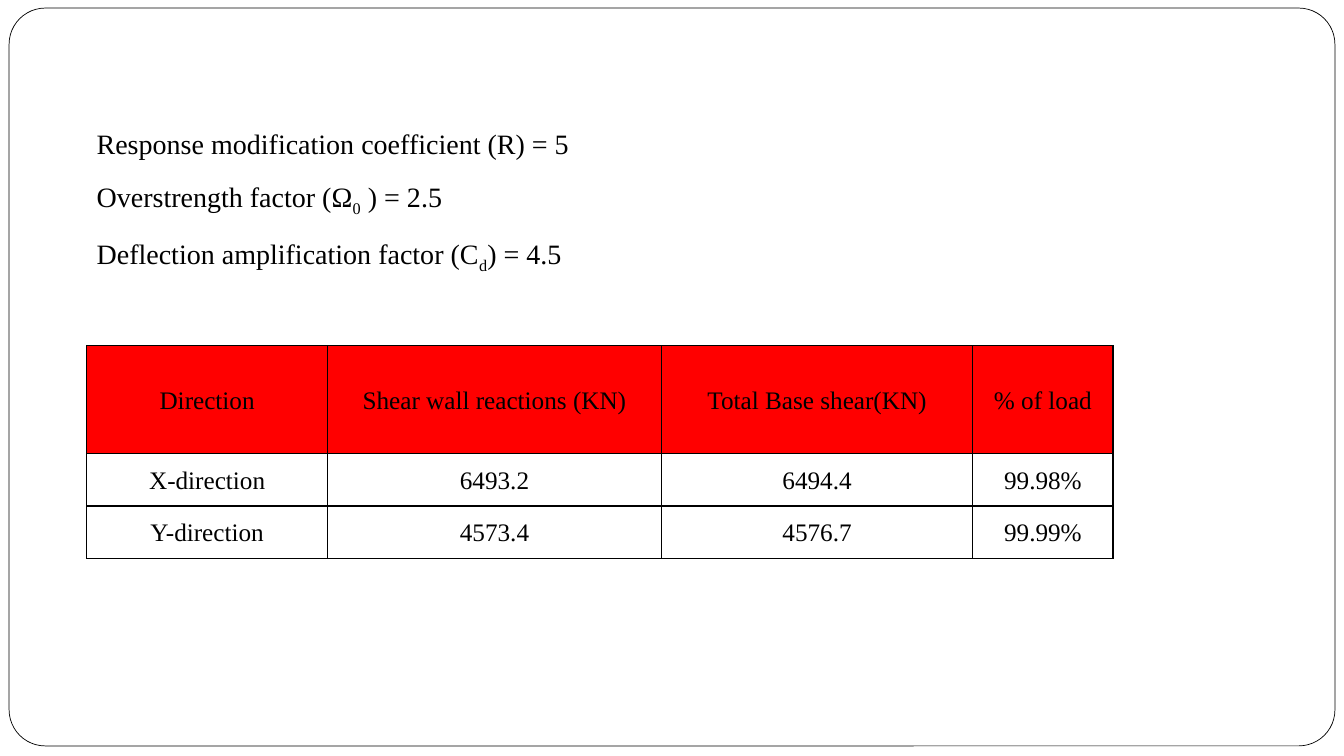
from lxml import etree
from pptx import Presentation, util as u
from pptx.dml.color import RGBColor
from pptx.enum import shapes, text
from pptx.oxml.ns import qn

INK = {"black": "000000", "white": "FFFFFF", "red": "FF0000"}
FACE = "Times New Roman"
WIDE, HIGH = 13.33, 7.5
LEFT = 0.86

FACTS = [
    ["Response modification coefficient (R) = 5"],
    ["Overstrength factor (Ω", "0", " ) = 2.5"],
    ["Deflection amplification factor (C", "d", ") = 4.5"],
]
LOADS = [
    ["Direction", "Shear wall reactions (KN)", "Total Base shear(KN)", "% of load"],
    ["X-direction", "6493.2", "6494.4", "99.98%"],
    ["Y-direction", "4573.4", "4576.7", "99.99%"],
]
COLS = [2.39, 3.31, 3.09, 1.39]
ROWS = [1.07, 0.52, 0.52]


def color(name):
    return RGBColor.from_string(INK[name])


def paint(item, name):
    item.fill.solid()
    item.fill.fore_color.rgb = color(name)


def style(run, size):
    run.font.name = FACE
    run.font.size = u.Pt(size)
    run.font.color.rgb = color("black")


def box(*sides):
    return [u.Inches(side) for side in sides]


def add_frame(slide):
    gap = 0.09
    frame = slide.shapes.add_shape(
        shapes.MSO_SHAPE.ROUNDED_RECTANGLE,
        *box(gap, 0.08, WIDE - 2 * gap, 7.32))
    frame.adjustments[0] = 0.049
    frame.shadow.inherit = False
    paint(frame, "white")
    frame.line.color.rgb = color("black")
    frame.line.width = u.Pt(0.5)


def add_facts(slide):
    body = slide.shapes.add_textbox(*box(LEFT, 1.04, 9.57, 1.62)).text_frame
    body.word_wrap = True
    for row, parts in enumerate(FACTS):
        para = body.add_paragraph() if row else body.paragraphs[0]
        para.line_spacing = 1.5
        for spot, part in enumerate(parts):
            run = para.add_run()
            run.text = part
            style(run, 20)
            if spot == 1:
                run._r.get_or_add_rPr().set("baseline", "-25000")


def add_edges(cell):
    props = cell._tc.get_or_add_tcPr()
    for spot, side in enumerate("LRTB"):
        edge = etree.Element(qn(f"a:ln{side}"), w=str(u.Pt(1)))
        fill = etree.SubElement(edge, qn("a:solidFill"))
        etree.SubElement(fill, qn("a:srgbClr"), val=INK["black"])
        props.insert(spot, edge)


def fill_cell(cell, words, back):
    cell.margin_left = cell.margin_right = u.Inches(0.07)
    cell.margin_top = cell.margin_bottom = 0
    cell.vertical_anchor = text.MSO_ANCHOR.MIDDLE
    para = cell.text_frame.paragraphs[0]
    para.text = words
    para.alignment = text.PP_ALIGN.CENTER
    para.line_spacing = 1.07
    style(para.runs[0], 18)
    paint(cell, back)
    add_edges(cell)


def add_loads(slide):
    grid = slide.shapes.add_table(
        len(ROWS), len(COLS), *box(LEFT, 3.43, sum(COLS), sum(ROWS))).table
    for col, width in zip(grid.columns, COLS):
        col.width = u.Inches(width)
    for row, height in zip(grid.rows, ROWS):
        row.height = u.Inches(height)
    for r, line in enumerate(LOADS):
        for c, words in enumerate(line):
            fill_cell(grid.cell(r, c), words, "white" if r else "red")


def main():
    deck = Presentation()
    deck.slide_width, deck.slide_height = box(WIDE, HIGH)
    slide = deck.slides.add_slide(deck.slide_layouts[6])
    add_frame(slide)
    add_facts(slide)
    add_loads(slide)
    deck.save("out.pptx")


if __name__ == "__main__":
    main()
